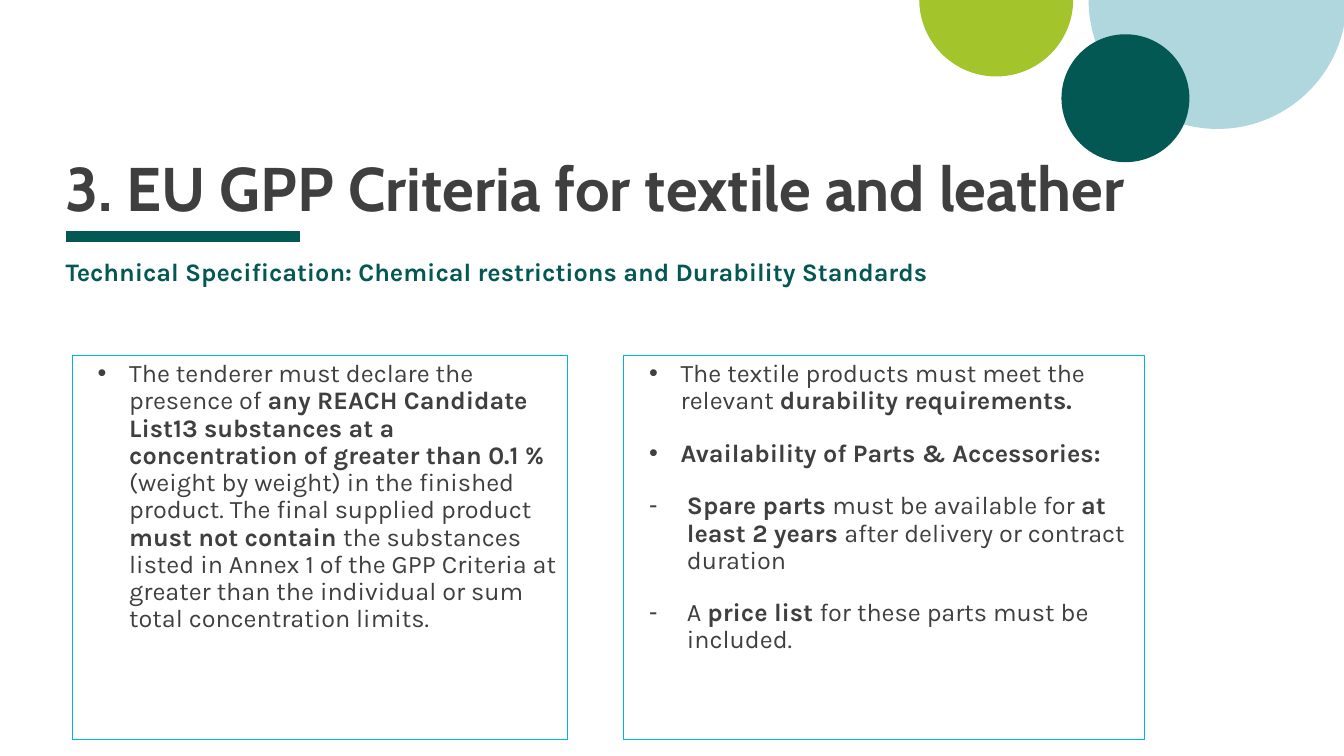
from lxml import etree
from pptx import Presentation
from pptx.dml.color import RGBColor
from pptx.enum.shapes import MSO_CONNECTOR, MSO_SHAPE
from pptx.enum.text import MSO_ANCHOR, MSO_AUTO_SIZE, PP_ALIGN
from pptx.oxml.ns import qn
from pptx.util import Pt

STRAIGHT = MSO_CONNECTOR.STRAIGHT
PIE, OVAL = MSO_SHAPE.PIE, MSO_SHAPE.OVAL
TOP, BOTTOM = MSO_ANCHOR.TOP, MSO_ANCHOR.BOTTOM
NO_AUTOFIT = MSO_AUTO_SIZE.NONE
LEFT = PP_ALIGN.LEFT

DARK_GREEN = RGBColor(0x03, 0x58, 0x54)
LIME = RGBColor(0xA3, 0xC4, 0x2A)
PALE_BLUE = RGBColor(0xAF, 0xD7, 0xDD)
BORDER_BLUE = RGBColor(0x00, 0xB0, 0xF0)
TEXT_GREY = RGBColor(0x3F, 0x3F, 0x3F)

BULLET = ("•", 40.5, -22.5)
DASH = ("-", 45, -27)
NO_MARKER = (None, 18, 0)

SUBTITLE = [
    (NO_MARKER, [("Technical Specification: Chemical restrictions and Durability Standards", True)]),
]
CHEMICALS = [
    (BULLET, [
        ("The tenderer must declare the presence of ", False),
        ("any REACH Candidate List13 substances at a concentration of greater than 0.1 % ", True),
        ("(weight by weight) in the finished product. The final supplied product ", False),
        ("must not contain ", True),
        ("the substances listed in Annex 1 of the GPP Criteria at greater than "
         "the individual or sum total concentration limits.", False),
    ]),
]
DURABILITY = [
    (BULLET, [
        ("The textile products must meet the relevant ", False),
        ("durability requirements.", True),
    ]),
    (BULLET, [("Availability of Parts & Accessories:", True)]),
    (DASH, [
        ("Spare parts ", True),
        ("must be available for ", False),
        ("at least 2 years ", True),
        ("after delivery or contract duration", False),
    ]),
    (DASH, [
        ("A ", False),
        ("price list ", True),
        ("for these parts must be included.", False),
    ]),
]


def add_circle(slide, kind, left, top, diameter, color):
    shape = slide.shapes.add_shape(kind, Pt(left), Pt(top), Pt(diameter), Pt(diameter))
    shape.shadow.inherit = False
    shape.fill.solid()
    shape.fill.fore_color.rgb = color
    shape.line.fill.background()
    if kind == PIE:
        shape.adjustments[0] = 0
        shape.adjustments[1] = 108


def add_rule(slide, left, right, y):
    rule = slide.shapes.add_connector(STRAIGHT, Pt(left), Pt(y), Pt(right), Pt(y))
    rule.line.color.rgb = DARK_GREEN
    rule.line.width = Pt(8)
    etree.SubElement(rule._element.spPr, qn("a:effectLst"))


def place(shape, left, top, width, height, anchor, inset_top):
    shape.left, shape.top = Pt(left), Pt(top)
    shape.width, shape.height = Pt(width), Pt(height)
    frame = shape.text_frame
    frame.word_wrap = True
    frame.auto_size = NO_AUTOFIT
    frame.vertical_anchor = anchor
    frame.margin_left = frame.margin_right = frame.margin_bottom = 0
    frame.margin_top = Pt(inset_top)


def set_font(paragraph, name, size, color):
    paragraph.font.name = name
    paragraph.font.size = Pt(size)
    paragraph.font.color.rgb = color


def set_marker(paragraph, character, margin, indent):
    properties = paragraph._p.get_or_add_pPr()
    properties.set("marL", str(Pt(margin)))
    properties.set("indent", str(Pt(indent)))
    if character is None:
        etree.SubElement(properties, qn("a:buNone"))
        return
    marker_color = etree.SubElement(properties, qn("a:buClr"))
    etree.SubElement(marker_color, qn("a:srgbClr"), val=str(TEXT_GREY))
    etree.SubElement(properties, qn("a:buFont"), typeface="Arial")
    etree.SubElement(properties, qn("a:buChar"), char=character)


def fill_title(title, text):
    place(title, 46.8, 41.8, 769.7, 117.4, BOTTOM, 0)
    paragraph = title.text_frame.paragraphs[0]
    paragraph.alignment = LEFT
    paragraph.line_spacing = 0.8
    set_font(paragraph, "Cabin", 44, TEXT_GREY)
    paragraph.font.bold = True
    paragraph.add_run().text = text


def fill_body(shape, box, items, color):
    place(shape, *box, TOP, 3.6)
    frame = shape.text_frame
    for index, (marker, runs) in enumerate(items):
        paragraph = frame.add_paragraph() if index else frame.paragraphs[0]
        set_marker(paragraph, *marker)
        paragraph.alignment = LEFT
        paragraph.line_spacing = 0.9
        paragraph.space_before = Pt(18 if index else 0)
        set_font(paragraph, "Karla", 18, color)
        for text, bold in runs:
            run = paragraph.add_run()
            run.text = text
            run.font.bold = bold


def add_border(shape):
    shape.line.color.rgb = BORDER_BLUE
    shape.line.width = Pt(0.75)


def main():
    presentation = Presentation()
    presentation.slide_width, presentation.slide_height = Pt(960), Pt(540)
    slide = presentation.slides.add_slide(presentation.slide_layouts[4])
    subtitle, chemicals, spare, durability = list(slide.placeholders)[1:]
    spare._element.getparent().remove(spare._element)

    add_rule(slide, 46.8, 214.6, 169.2)
    add_circle(slide, PIE, 777.6, -92.2, 184.3, PALE_BLUE)
    add_circle(slide, PIE, 656.6, -55.4, 110, LIME)
    add_circle(slide, OVAL, 758.2, 24.5, 91.4, DARK_GREEN)

    fill_title(slide.shapes.title, "3. EU GPP Criteria for textile and leather")
    fill_body(subtitle, (28.8, 182.2, 700, 59), SUBTITLE, DARK_GREEN)
    fill_body(chemicals, (51.8, 254.2, 353.5, 274.3), CHEMICALS, TEXT_GREY)
    fill_body(durability, (445.7, 254.2, 371.5, 274.3), DURABILITY, TEXT_GREY)
    for shape in (chemicals, durability):
        add_border(shape)
    presentation.save("out.pptx")


if __name__ == "__main__":
    main()
